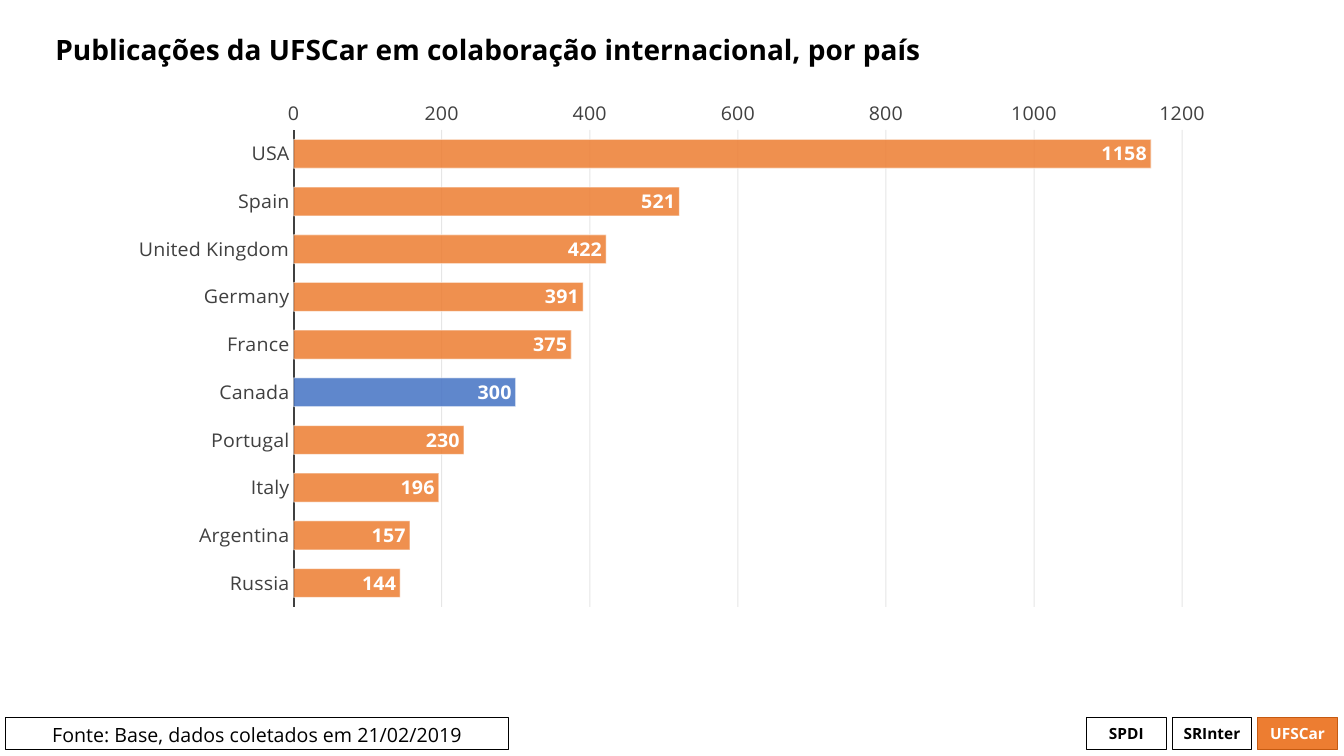
import pptx
import pptx.chart.data
import pptx.dml.color
import pptx.enum.chart
import pptx.enum.shapes
import pptx.enum.text
import pptx.oxml
import pptx.oxml.ns
import pptx.util

Pt = pptx.util.Pt
qn = pptx.oxml.ns.qn
NS = pptx.oxml.ns.nsdecls
XL = pptx.enum.chart
MSO = pptx.enum.text.MSO_ANCHOR
ALIGN = pptx.enum.text.PP_ALIGN

COUNTS = {
    "USA": 1158, "Spain": 521, "United Kingdom": 422, "Germany": 391,
    "France": 375, "Canada": 300, "Portugal": 230, "Italy": 196,
    "Argentina": 157, "Russia": 144,
}


def color(code):
    return pptx.dml.color.RGBColor.from_string(code)


def paint(fill, code, alpha=100):
    """Give a solid fill its colour and its opacity in percent."""
    fill.solid()
    fill.fore_color.rgb = color(code)
    if alpha < 100:
        tint = fill._xPr.find(qn("a:solidFill"))[0]
        tint.append(pptx.oxml.parse_xml(
            f'<a:alpha {NS("a")} val="{alpha * 1000}"/>'))


class Deck:
    face = "Open Sans"
    black, white, gray = "000000", "FFFFFF", "404040"
    orange, blue = "ED7D31", "4472C4"

    def __init__(self, wide, high):
        self.show = pptx.Presentation()
        self.show.slide_width, self.show.slide_height = Pt(wide), Pt(high)
        self.slide = self.show.slides.add_slide(self.show.slide_layouts[6])

    def font(self, font, size, code, bold=False):
        font.name, font.size, font.bold = self.face, Pt(size), bold
        font.color.rgb = color(code)

    def label(self, shape, text, size, code, bold, align, anchor):
        frame = shape.text_frame
        frame.text = text
        frame.word_wrap = True
        frame.vertical_anchor = anchor
        para = frame.paragraphs[0]
        para.alignment = align
        self.font(para.runs[0].font, size, code, bold)
        return para

    def title(self, box, text):
        shape = self.slide.shapes.add_textbox(*map(Pt, box))
        para = self.label(shape, text, 20, self.black, True,
                          ALIGN.LEFT, MSO.MIDDLE)
        para.line_spacing = 0.9

    def tag(self, box, text, size=11, bold=True, anchor=MSO.MIDDLE,
            fill=None, edge=black, ink=black):
        shape = self.slide.shapes.add_shape(
            pptx.enum.shapes.MSO_SHAPE.RECTANGLE, *map(Pt, box))
        shape.shadow.inherit = False
        if fill:
            paint(shape.fill, fill)
        else:
            shape.fill.background()
        shape.line.color.rgb = color(edge)
        shape.line.width = Pt(0.75)
        self.label(shape, text, size, ink, bold, ALIGN.CENTER, anchor)

    def bar(self, format, code):
        paint(format.fill, code, 85)
        format.line.width = Pt(0.75)
        paint(format.line.fill, self.white, 50)

    def axis(self, axis):
        axis.major_tick_mark = axis.minor_tick_mark = XL.XL_TICK_MARK.NONE
        self.font(axis.tick_labels.font, 14, self.gray)

    def chart(self, box, counts, mark):
        """Draw horizontal bars, with the category named mark in blue."""
        data = pptx.chart.data.CategoryChartData()
        data.categories = list(counts)
        data.add_series("Series 1", list(counts.values()))
        chart = self.slide.shapes.add_chart(
            XL.XL_CHART_TYPE.BAR_CLUSTERED, *map(Pt, box), data).chart
        chart.has_legend = chart.has_title = False
        self.font(chart.font, 14, self.black)

        names, scale = chart.category_axis, chart.value_axis
        self.axis(names)
        names.reverse_order = True
        names.crosses = XL.XL_AXIS_CROSSES.MAXIMUM
        names.format.line.color.rgb = color(self.gray)
        names.format.line.width = Pt(1.5)

        self.axis(scale)
        scale.minimum_scale, scale.maximum_scale = 0, 1200
        scale.major_unit = 200
        scale.format.line.fill.background()
        grid = scale.major_gridlines.format.line
        grid.width = Pt(0.75)
        paint(grid.fill, "0D0D0D", 10)

        plot = chart.plots[0]
        plot.gap_width = 65
        plot.vary_by_categories = False
        bars = plot.series[0]
        self.bar(bars.format, self.orange)
        self.bar(bars.points[list(counts).index(mark)].format, self.blue)
        labels = bars.data_labels
        labels.show_value = True
        labels.position = XL.XL_LABEL_POSITION.INSIDE_END
        self.font(labels.font, 14, self.white, True)
        self.place(chart, x=0.16, y=0.02, w=0.8, h=0.89)

    def place(self, chart, **part):
        """Fix the inner plot area as fractions of the chart."""
        area = chart._chartSpace.chart.plotArea
        old = area.find(qn("c:layout"))
        if old is not None:
            area.remove(old)
        sizes = "".join(f'<c:{k} val="{v}"/>' for k, v in part.items())
        area.insert(0, pptx.oxml.parse_xml(
            f'<c:layout {NS("c")}><c:manualLayout>'
            '<c:layoutTarget val="inner"/>'
            '<c:xMode val="edge"/><c:yMode val="edge"/>'
            f'{sizes}</c:manualLayout></c:layout>'))


def main():
    deck = Deck(960, 540)
    top, high = 512.5, 23
    left, step, wide = 776, 61.2, 57
    looks = {
        "SPDI": {},
        "SRInter": {},
        "UFSCar": dict(fill=deck.orange, edge="C55A11", ink=deck.white),
    }
    for i, (name, look) in enumerate(looks.items()):
        deck.tag((left + i * step, top, wide, high), name, **look)
    deck.tag((4, top, 359.5, high), "Fonte: Base, dados coletados em 21/02/2019",
             size=14, bold=False, anchor=MSO.TOP)
    deck.title((32.4, 4.3, 893.5, 65.5),
               "Publicações da UFSCar em colaboração internacional, por país")
    deck.chart((82.8, 71.3, 793.4, 396.7), COUNTS, mark="Canada")
    deck.show.save("out.pptx")


if __name__ == "__main__":
    main()
